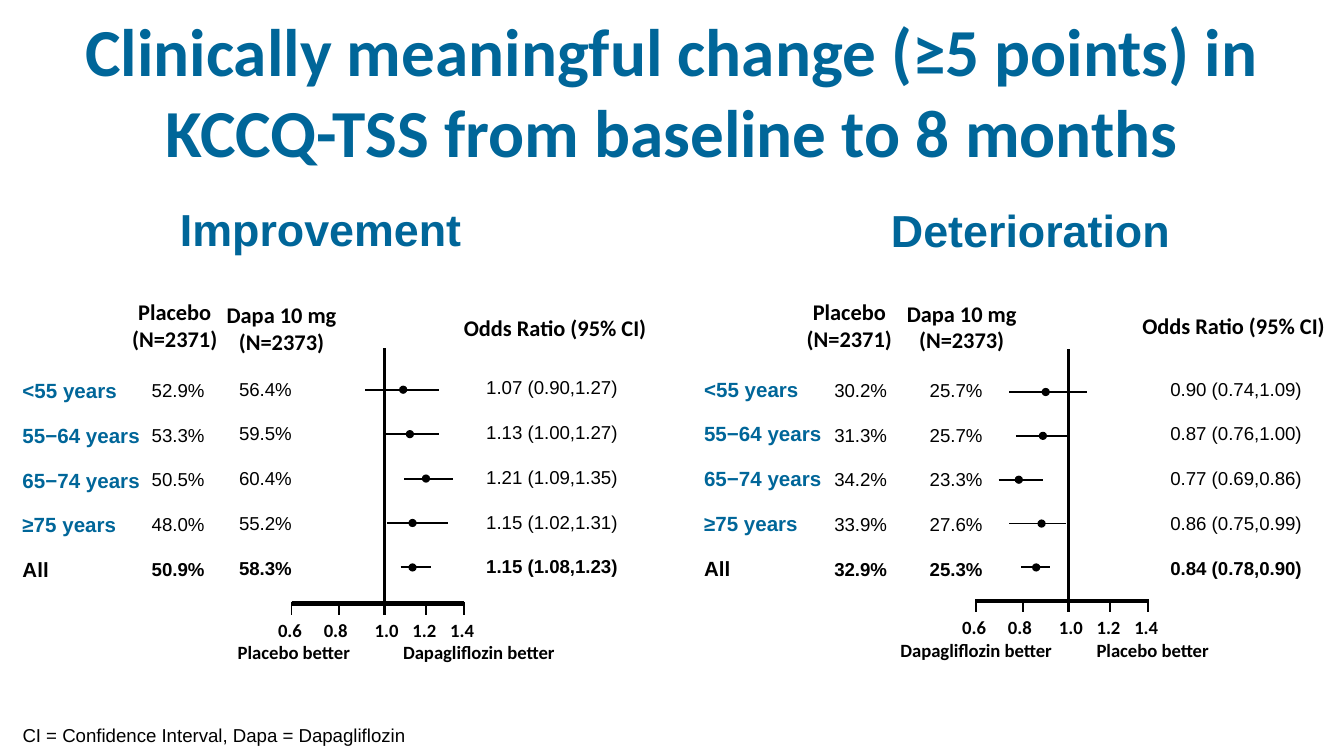
from lxml import etree
from pptx import Presentation
from pptx import util as u
from pptx.dml import color
from pptx.enum import shapes, text
from pptx.oxml import ns

BLUE, BLACK = "006699", "000000"
TITLE = "Clinically meaningful change (≥5 points) in KCCQ-TSS from baseline to 8 months"
NOTE = "CI = Confidence Interval, Dapa = Dapagliflozin"
AGES = ["<55 years", "55−64 years", "65−74 years", "≥75 years", "All"]
HEADS = ["Placebo\n(N=2371)", "Dapa 10 mg\n(N=2373)", "Odds Ratio (95% CI)"]

# Axis ticks: label, tick position, label position, both from the axis start
TICKS = [("0.6", 0, -12.2), ("0.8", 25.2, 12.3), ("1.0", 49.7, 39.6),
         ("1.2", 72, 59.8), ("1.4", 92.2, 80)]

# Rows: placebo, dapa, odds ratio, then interval start, mark and end on the slide
# Columns and heads: left, top, width
PANELS = [
    dict(name="Improvement", at=(89.3, 104.4), axis=(156.2, 323.3), top=186.5,
         row=(208.8, 23.8),
         heads=[(52.6, 157, 82), (110.9, 158.4, 80), (218.9, 165.6, 157)],
         cols=[(5, 200.2, 94), (74.2, 199.4, 50), (121, 198.7, 50), (253.4, 198, 99.4)],
         sides=[("Placebo better", 122.4, 72), ("Dapagliflozin better", 211, 95.8)],
         rows=[("52.9%", "56.4%", "1.07 (0.90,1.27)", 195.8, 216, 235.4),
               ("53.3%", "59.5%", "1.13 (1.00,1.27)", 206.6, 219.6, 235.4),
               ("50.5%", "60.4%", "1.21 (1.09,1.35)", 216.7, 228.2, 242.6),
               ("48.0%", "55.2%", "1.15 (1.02,1.31)", 207.4, 221, 239.8),
               ("50.9%", "58.3%", "1.15 (1.08,1.23)", 214.6, 221, 231.1)]),
    dict(name="Deterioration", at=(470.2, 105.1), axis=(522.7, 322), top=187.2,
         row=(210, 23.5),
         heads=[(414, 157, 82), (477.4, 157.7, 75.6), (602.6, 164.2, 116.6)],
         cols=[(370.1, 199.4, 87), (439.9, 199.4, 50), (491, 199.4, 50), (619.9, 198.7, 99.4)],
         sides=[("Dapagliflozin better", 477.4, 95.8), ("Placebo better", 582.5, 72)],
         rows=[("30.2%", "25.7%", "0.90 (0.74,1.09)", 540.7, 560.2, 582.5),
               ("31.3%", "25.7%", "0.87 (0.76,1.00)", 544.3, 558.7, 572.4),
               ("34.2%", "23.3%", "0.77 (0.69,0.86)", 535, 545.8, 558.7),
               ("33.9%", "27.6%", "0.86 (0.75,0.99)", 540.7, 558, 571),
               ("32.9%", "25.3%", "0.84 (0.78,0.90)", 547.2, 555.1, 562.3)]),
]

deck = Presentation()
deck.slide_width, deck.slide_height = u.Pt(720), u.Pt(405)
slide = deck.slides.add_slide(deck.slide_layouts[6])


def paint(part, tone):
    part.rgb = color.RGBColor.from_string(tone)


def write(words, x, y, w, h, size=10, font="Arial", tone=BLACK, bold=False,
          center=False, pad=(7.2, 3.6), wrap=True, rows=False):
    """Add a text box; with rows, space the lines as table rows, the last in bold black."""
    frame = slide.shapes.add_textbox(u.Pt(x), u.Pt(y), u.Pt(w), u.Pt(h)).text_frame
    frame.word_wrap = wrap
    frame.margin_left = frame.margin_right = u.Pt(pad[0])
    frame.margin_top = frame.margin_bottom = u.Pt(pad[1])
    lines = words.split("\n")
    for i, line in enumerate(lines):
        para = frame.paragraphs[0] if i == 0 else frame.add_paragraph()
        para.alignment = text.PP_ALIGN.CENTER if center else text.PP_ALIGN.LEFT
        last = rows and i == len(lines) - 1
        if rows:
            para.line_spacing = u.Pt(12)
            para.space_after = u.Pt(0 if last else 12)
        run = para.add_run()
        run.text = line
        run.font.name, run.font.size = font, u.Pt(size)
        run.font.bold = bold or last
        paint(run.font.color, BLACK if last else tone)


def label(words, x, y, w, h=17.3, **form):
    write(words, x, y, w, h, font="Calibri", bold=True, pad=(5, 2.9), **form)


def rule(x1, y1, x2, y2, width=1):
    line = slide.shapes.add_connector(
        shapes.MSO_CONNECTOR.STRAIGHT, u.Pt(x1), u.Pt(y1), u.Pt(x2), u.Pt(y2))
    line.line.width = u.Pt(width)
    line.line.fill.solid()
    paint(line.line.fill.fore_color, BLACK)
    etree.SubElement(line._element.spPr, ns.qn("a:effectLst"))


def dot(x, y, size=4.4):
    mark = slide.shapes.add_shape(shapes.MSO_SHAPE.OVAL, u.Pt(x - size / 2),
                                  u.Pt(y - size / 2), u.Pt(size), u.Pt(size))
    mark.shadow.inherit = False
    mark.fill.solid()
    paint(mark.fill.fore_color, BLACK)
    mark.line.fill.background()


# Title and footnote
write(TITLE, 0, 1.5, 720, 74, size=36, font="Calibri", tone=BLUE, bold=True, center=True)
write(NOTE, 5, 384.5, 404.6, 20)

for panel in PANELS:
    # Headings
    write(panel["name"], *panel["at"], 183.6, 36, size=24, tone=BLUE, bold=True)
    for head, (x, y, w) in zip(HEADS, panel["heads"]):
        label(head, x, y, w, 34.6 if "\n" in head else 20.2, size=12, center=True)

    # Text columns
    data = list(zip(*panel["rows"]))[:3]
    for i, (col, (x, y, w)) in enumerate(zip([AGES, *data], panel["cols"])):
        form = dict(size=11, tone=BLUE, bold=True) if i == 0 else {}
        write("\n".join(col), x, y, w, 116.6, rows=True, **form)

    # Intervals and marks
    top, step = panel["row"]
    for i, (*_, low, mid, high) in enumerate(panel["rows"]):
        y = top + i * step
        rule(low, y, high, y)
        dot(mid, y)

    # Axis, ticks and reference line
    left, base = panel["axis"]
    rule(left, base, left + TICKS[-1][1], base, 2.25)
    for tick, dx, shift in TICKS:
        x = left + dx
        if tick == "1.0":
            rule(x, panel["top"], x, base + 6, 1.5)
        else:
            rule(x, base - 1, x, base + 6)
        label(tick, left + shift, base + 5.2, 23.8, wrap=False)
    for side, x, w in panel["sides"]:
        label(side, x, base + 17.4, w, wrap=False)

deck.save("out.pptx")
